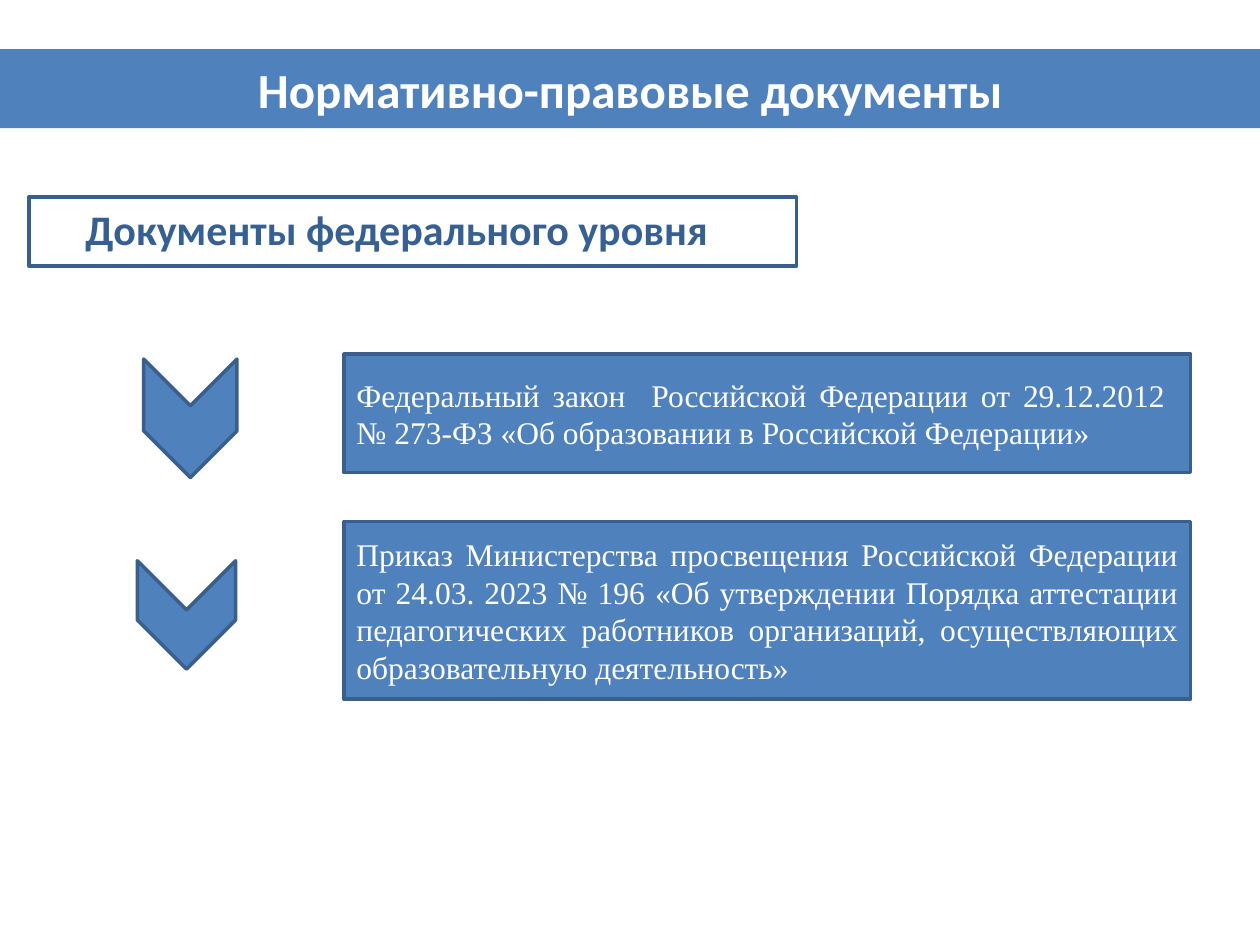
"""Build the slide that lists the federal legal documents."""
from dataclasses import dataclass

from pptx import Presentation
from pptx.dml.color import RGBColor as RGB
from pptx.enum.shapes import MSO_SHAPE as Shape
from pptx.enum.text import MSO_ANCHOR as Anchor, MSO_AUTO_SIZE as Fit, PP_ALIGN as Align
from pptx.util import Pt


@dataclass(frozen=True)
class Theme:
    blue: RGB = RGB.from_string("4F81BD")
    edge: RGB = RGB.from_string("3A5F8C")
    navy: RGB = RGB.from_string("376092")
    white: RGB = RGB.from_string("FFFFFF")
    sans: str = "Calibri"
    serif: str = "Times New Roman"
    title: int = 28
    head: int = 24
    body: int = 18
    line: int = 2


theme = Theme()
deck = Presentation()
deck.slide_width, deck.slide_height = Pt(720), Pt(540)
slide = deck.slides.add_slide(deck.slide_layouts[6])


def draw(kind, box, fill=theme.blue, edge=theme.edge):
    shape = slide.shapes.add_shape(kind, *map(Pt, box))
    shape.shadow.inherit = False
    if fill:
        shape.fill.solid()
        shape.fill.fore_color.rgb = fill
    else:
        shape.fill.background()
    if edge:
        shape.line.color.rgb = edge
        shape.line.width = Pt(theme.line)
    else:
        shape.line.fill.background()
    return shape


def write(shape, text, align, style, after=0):
    par = shape.text_frame.paragraphs[0]
    par.alignment = align
    par.space_after = Pt(after)
    run = par.add_run()
    run.text = text
    run.font.color.rgb = style["color"]
    for name in ("name", "size", "bold"):
        setattr(run.font, name, style[name])


title = {"name": theme.sans, "size": Pt(theme.title), "bold": True, "color": theme.white}
head = {"name": theme.sans, "size": Pt(theme.head), "bold": True, "color": theme.navy}
body = {"name": theme.serif, "size": Pt(theme.body), "bold": False, "color": theme.white}

banner = draw(Shape.RECTANGLE, (0, 28, 720, 45.2), edge=None)
banner.text_frame.vertical_anchor = Anchor.MIDDLE
write(banner, "Нормативно-правовые документы", Align.CENTER, title)

draw(Shape.RECTANGLE, (16.6, 112.5, 438.5, 39.5), fill=None)
label = slide.shapes.add_textbox(*map(Pt, (39.6, 112.5, 374.4, 36.3)))
label.text_frame.word_wrap = False
label.text_frame.auto_size = Fit.SHAPE_TO_FIT_TEXT
write(label, "Документы федерального уровня", Align.CENTER, head)

laws = [
    ("Федеральный закон  Российской Федерации от 29.12.2012  "
     "№ 273-ФЗ «Об образовании в Российской Федерации»",
     202.4, 67.6, 0, (74.9, 212.4, 67.7, 53.3)),
    ("Приказ Министерства просвещения Российской Федерации от 24.03. 2023 № 196 "
     "«Об утверждении Порядка аттестации педагогических работников организаций, "
     "осуществляющих образовательную деятельность»",
     298, 101.5, 7.5, (75.6, 323.3, 61.9, 56.2)),
]
for text, top, high, after, mark in laws:
    card = draw(Shape.RECTANGLE, (196.6, top, 483.8, high))
    card.text_frame.vertical_anchor = Anchor.MIDDLE
    write(card, text, Align.JUSTIFY, body, after)
    arrow = draw(Shape.CHEVRON, mark)
    arrow.rotation = 90

deck.save("out.pptx")
